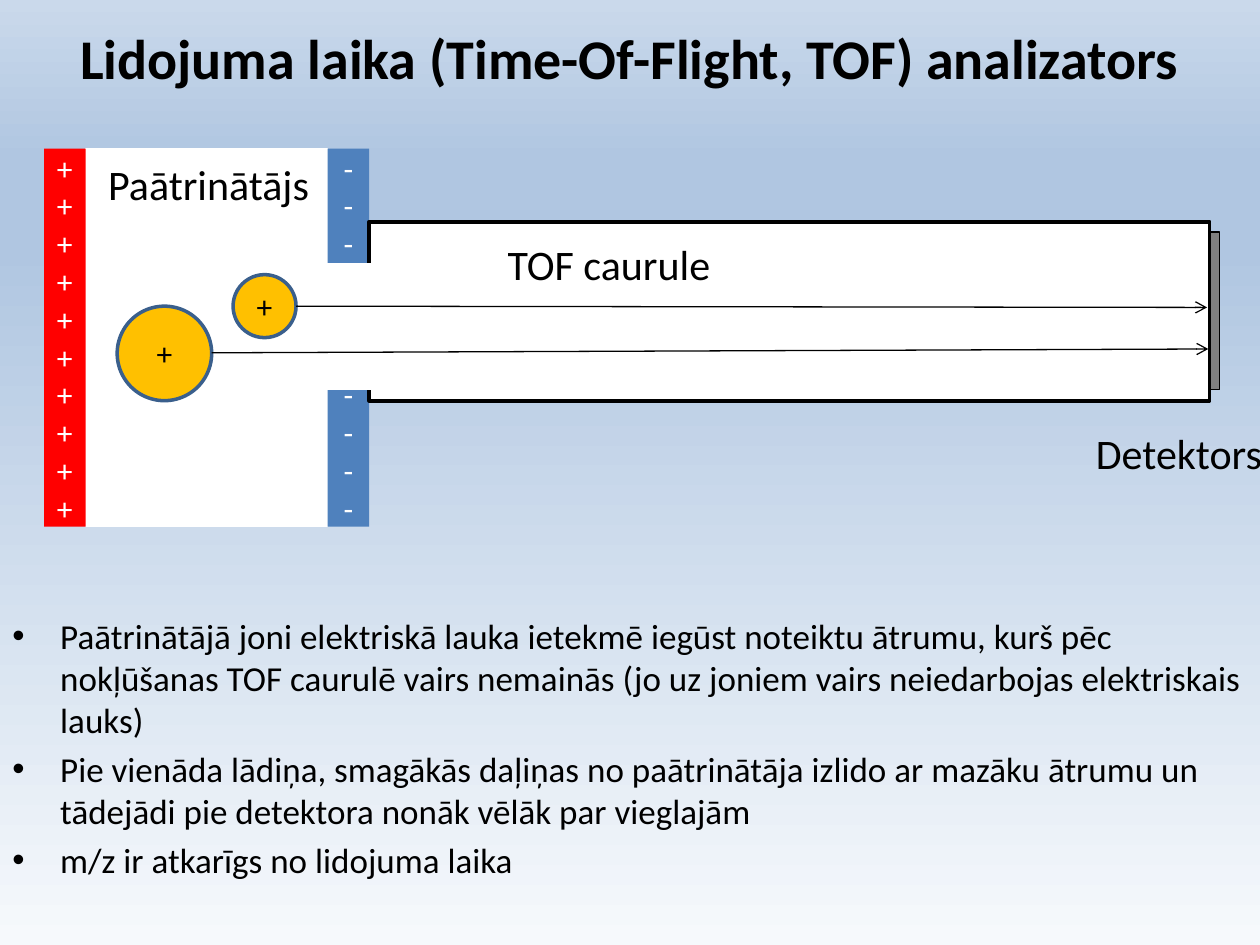
from lxml.etree import SubElement
from pptx import Presentation
from pptx.dml.color import RGBColor
from pptx.enum.shapes import MSO_CONNECTOR as Connector, MSO_SHAPE as Shape
from pptx.enum.text import MSO_ANCHOR as Anchor, PP_ALIGN as Align
from pptx.oxml.ns import qn
from pptx.util import Inches, Pt

FONT = "Calibri"
BLACK, WHITE = "000000", "FFFFFF"
BACKGROUND = [(0, "F6F9FC"), (74, "B0C6E1"), (83, "B0C6E1"), (100, "CAD9EB")]
BULLETS = [
    "Paātrinātājā joni elektriskā lauka ietekmē iegūst noteiktu ātrumu, kurš pēc "
    "nokļūšanas TOF caurulē vairs nemainās (jo uz joniem vairs neiedarbojas "
    "elektriskais lauks)",
    "Pie vienāda lādiņa, smagākās daļiņas no paātrinātāja izlido ar mazāku ātrumu un "
    "tādejādi pie detektora nonāk vēlāk par vieglajām",
    "m/z ir atkarīgs no lidojuma laika",
]


def color(value):
    return RGBColor.from_string(value)


def write(para, text, size=18, ink=BLACK, bold=False, align=Align.LEFT):
    para.alignment = align
    span = para.add_run()
    span.text = text
    font = span.font
    font.name, font.size, font.bold = FONT, Pt(size), bold
    font.color.rgb = color(ink)


def add_text_box(page, box, anchor=Anchor.TOP):
    frame = page.shapes.add_textbox(*map(Inches, box)).text_frame
    frame.word_wrap = True
    frame.vertical_anchor = anchor
    return frame


def add_label(page, box, text, **style):
    write(add_text_box(page, box).paragraphs[0], text, **style)


def add_block(page, box, fill, line=None, width=0.75, text="", ink=BLACK, kind=Shape.RECTANGLE):
    block = page.shapes.add_shape(kind, *map(Inches, box))
    block.shadow.inherit = False
    block.fill.solid()
    block.fill.fore_color.rgb = color(fill)
    if line:
        block.line.color.rgb = color(line)
        block.line.width = Pt(width)
    else:
        block.line.fill.background()
    if text:
        frame = block.text_frame
        frame.word_wrap = True
        frame.vertical_anchor = Anchor.MIDDLE
        write(frame.paragraphs[0], text, ink=ink, align=Align.CENTER)


def add_ion(page, left, top, size):
    add_block(page, (left, top, size, size), "FFC000", "3A5F8C", 2, "+", kind=Shape.OVAL)


def add_flight_path(page, start, end):
    path = page.shapes.add_connector(Connector.STRAIGHT, *map(Inches, start + end))
    path.line.color.rgb = color(BLACK)
    path.line.width = Pt(0.75)
    SubElement(path.line._get_or_add_ln(), qn("a:tailEnd"), type="arrow")
    SubElement(path._element.spPr, qn("a:effectLst"))


def paint_background(page):
    fill = page.background.fill
    fill.gradient()
    fill.gradient_angle = 90
    stops = page.element.xpath(".//p:bgPr/a:gradFill/a:gsLst")[0]
    for stop in list(stops):
        stops.remove(stop)
    for position, value in BACKGROUND:
        stop = SubElement(stops, qn("a:gs"), pos=str(position * 1000))
        SubElement(stop, qn("a:srgbClr"), val=value)


def add_title(page, box):
    para = add_text_box(page, box, Anchor.MIDDLE).paragraphs[0]
    write(para, "Lidojuma laika (Time-Of-Flight, TOF) analizators",
          size=32, bold=True, align=Align.CENTER)


def add_accelerator(page, box):
    left, top, width, height = box
    plate = 0.33
    right = left + width - plate
    add_block(page, (left + plate, top, width - 2 * plate, height), WHITE, WHITE)
    add_block(page, (left, top, plate, height), "FF0000", text="+" * 10, ink=WHITE)
    add_block(page, (right, top, plate, height), "4F81BD", text="-" * 10, ink=WHITE)
    add_ion(page, left + 1.5, top + 1, 0.5)
    add_ion(page, left + 0.58, top + 1.25, 0.75)
    add_label(page, (left + 0.41, top + 0.03, 1.92, 0.5), "Paātrinātājs", size=24)


def add_flight_tube(page, box):
    left, top, width, height = box
    right = left + width
    add_block(page, (right, top + 0.08, 0.08, 1.25), "808080", BLACK)
    add_label(page, (right - 1, top + height + 0.16, 1.67, 0.5), "Detektors", size=24)
    add_block(page, box, WHITE, BLACK, 2.25)
    add_block(page, (left - 0.42, top + 0.33, 0.58, 1), WHITE, WHITE)
    add_flight_path(page, (left - 0.58, top + 0.67), (right - 0.02, top + 0.68))
    add_flight_path(page, (left - 1.25, top + 1.04), (right - 0.01, top + 1.01))
    add_label(page, (left + 1, top + 0.08, 3.42, 0.5), "TOF caurule", size=24)


def add_bullets(page, box):
    frame = add_text_box(page, box)
    for index, text in enumerate(BULLETS):
        para = frame.add_paragraph() if index else frame.paragraphs[0]
        write(para, text, size=20)
        para.space_before = Pt(4)
        props = para._p.get_or_add_pPr()
        props.set("marL", str(Inches(0.38)))
        props.set("indent", str(Inches(-0.38)))
        SubElement(props, qn("a:buFont"), typeface="Arial")
        SubElement(props, qn("a:buChar"), char="•")


def main():
    deck = Presentation()
    deck.slide_width, deck.slide_height = Inches(10), Inches(7.5)
    page = deck.slides.add_slide(deck.slide_layouts[6])
    paint_background(page)
    add_title(page, (0, -0.17, 10, 1.25))
    add_bullets(page, (0, 4.83, 10, 2.67))
    add_accelerator(page, (0.35, 1.18, 2.58, 3))
    add_flight_tube(page, (2.93, 1.76, 6.67, 1.42))
    deck.save("out.pptx")


if __name__ == "__main__":
    main()
